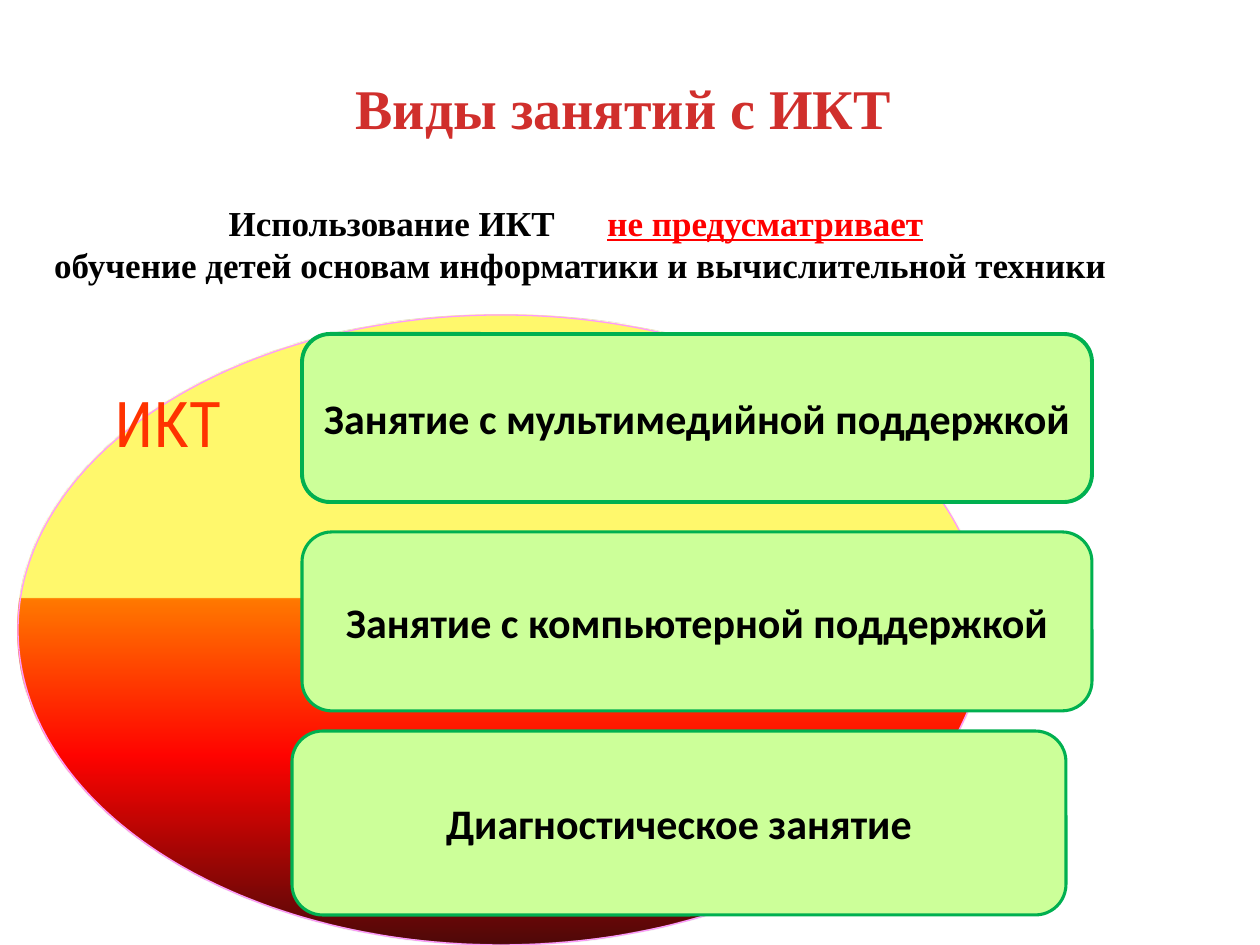
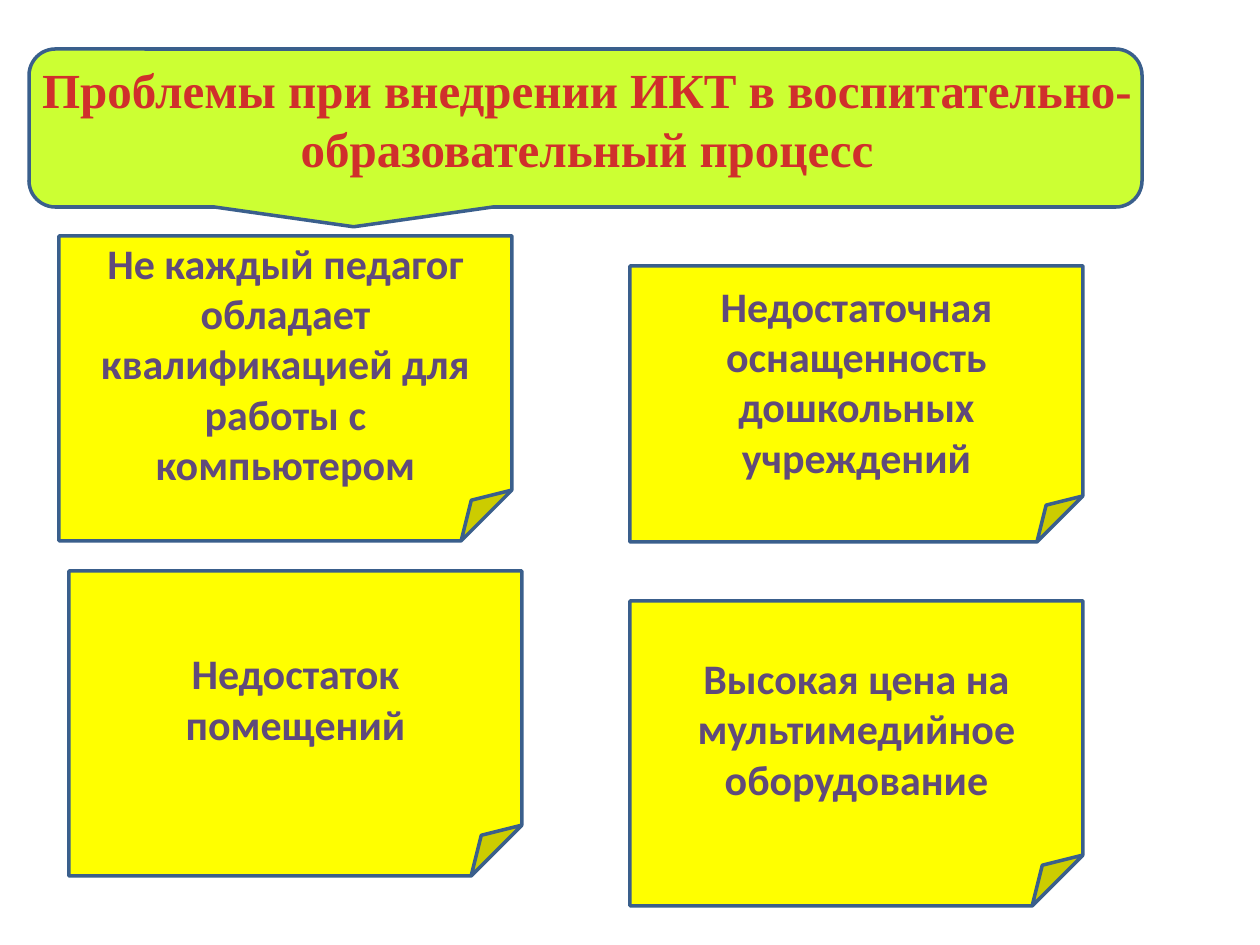
from collections import namedtuple
from dataclasses import dataclass

from lxml import etree
from pptx import Presentation
from pptx.dml.color import RGBColor as Rgb
from pptx.enum.shapes import MSO_SHAPE as Preset
from pptx.enum.text import MSO_ANCHOR as Anchor, PP_ALIGN as Align
from pptx.oxml.ns import qn
from pptx.util import Emu, Pt

PX = 914400 / 126
Box = namedtuple("Box", "x y w h")


@dataclass(frozen=True)
class Theme:
    serif: str = "Times New Roman"
    sans: str = "Calibri"
    narrow: str = "Roboto Condensed"
    black: str = "000000"
    red: str = "FF0000"
    oval_edge: str = "FF99FF"
    lesson_fill: str = "CCFF99"
    lesson_edge: str = "00B050"
    label: str = "FF3300"
    label_edge: str = "666699"
    header_fill: str = "CCFF33"
    note_fill: str = "FFFF00"
    blue_edge: str = "3A5F8C"
    purple: str = "604A7B"
    title_stops: tuple = ((0, "FC7C7A", 100), (75, "D02F2C", 100), (100, "C70500", 100))
    oval_stops: tuple = ((45, "FFF200", 57), (45, "FF7A00", 100),
                         (70, "FF0300", 100), (100, "4D0808", 100))
    large_title: int = 32
    small_title: int = 28
    body: int = 24
    intro: int = 20
    label_size: int = 36


THEME = Theme()


def emu(box):
    return [Emu(round(length * PX)) for length in box]


def assign(target, values):
    for name, value in values.items():
        setattr(target, name, value)


def fill_gradient(fill, owner, stops):
    """Fill from top to bottom with (percent, colour, opacity) stops."""
    fill.gradient()
    fill.gradient_angle = 270
    stop_list = next(owner.iter(qn("a:gsLst")))
    stop_list[:] = []
    for percent, colour, opacity in stops:
        stop = etree.SubElement(stop_list, qn("a:gs"), pos=str(percent * 1000))
        tint = etree.SubElement(stop, qn("a:srgbClr"), val=colour)
        if opacity < 100:
            etree.SubElement(tint, qn("a:alpha"), val=str(opacity * 1000))


def write(frame, lines, style, colour, anchor=Anchor.MIDDLE, wrap=True):
    """Write centred lines, each a list of (text, font changes, colour or None)."""
    assign(frame, {"vertical_anchor": anchor, "word_wrap": wrap})
    runs = []
    for index, line in enumerate(lines):
        paragraph = frame.add_paragraph() if index else frame.paragraphs[0]
        paragraph.alignment = Align.CENTER
        for text, changes, own_colour in line:
            run = paragraph.add_run()
            run.text = text
            assign(run.font, {**style, **changes})
            run.font.fill.solid()
            run.font.fill.fore_color.rgb = Rgb.from_string(own_colour or colour)
            runs.append(run)
    return runs


def add_panel(slide, preset, box, fill, edge, width):
    panel = slide.shapes.add_shape(preset, *emu(box))
    panel.shadow.inherit = False
    if isinstance(fill, str):
        panel.fill.solid()
        panel.fill.fore_color.rgb = Rgb.from_string(fill)
    else:
        fill_gradient(panel.fill, panel._element.spPr, fill)
    panel.line.color.rgb = Rgb.from_string(edge)
    panel.line.width = Pt(width)
    return panel


def add_text(slide, box, *args, **options):
    frame = slide.shapes.add_textbox(*emu(box)).text_frame
    return write(frame, *args, **options)


def add_title(slide, box, text, size):
    style = {"name": THEME.serif, "size": Pt(size), "bold": True}
    [title] = add_text(slide, box, [[(text, {}, None)]], style, THEME.black)
    fill_gradient(title.font.fill, title._r, THEME.title_stops)


def add_captioned(slide, preset, box, caption, look, colour, wrap):
    panel = add_panel(slide, preset, box, *look)
    style = {"name": THEME.sans, "size": Pt(THEME.body), "bold": True}
    write(panel.text_frame, [[(caption, {}, None)]], style, colour, wrap=wrap)


def add_intro(slide, box):
    style = {"name": THEME.serif, "size": Pt(THEME.intro), "bold": True}
    lines = [
        [("Использование ИКТ", {}, None), (" ", {}, None),
         ("не предусматривает", {"underline": True}, THEME.red), (" ", {}, None)],
        [("обучение детей основам информатики и вычислительной техники", {}, None)],
    ]
    runs = add_text(slide, box, lines, style, THEME.black, anchor=Anchor.TOP)
    wide_gap = runs[1]
    wide_gap._r.get_or_add_rPr().set("spc", "2500")


def add_label(slide, box):
    style = {"name": THEME.narrow, "size": Pt(THEME.label_size)}
    [label] = add_text(slide, box, [[("ИКТ", {}, None)]], style, THEME.label,
                       anchor=Anchor.TOP, wrap=False)
    outline = etree.Element(qn("a:ln"), w=str(Pt(0.75)))
    ink = etree.SubElement(outline, qn("a:solidFill"))
    etree.SubElement(ink, qn("a:srgbClr"), val=THEME.label_edge)
    label._r.get_or_add_rPr().insert(0, outline)


def add_lessons(slide, box):
    """Place the oval over the whole box and the lesson types on top of it."""
    add_panel(slide, Preset.OVAL, box, THEME.oval_stops, THEME.oval_edge, 0.75)
    lessons = [
        ("Занятие с мультимедийной поддержкой", Box(284, 19, 790, 168), 2.25),
        ("Занятие с компьютерной поддержкой", Box(284, 217, 790, 179), 1.75),
        ("Диагностическое занятие", Box(274, 416, 774, 184), 1.75),
    ]
    for caption, place, width in lessons:
        spot = place._replace(x=box.x + place.x, y=box.y + place.y)
        look = (THEME.lesson_fill, THEME.lesson_edge, width)
        add_captioned(slide, Preset.FLOWCHART_ALTERNATE_PROCESS, spot, caption,
                      look, THEME.black, wrap=False)
    add_label(slide, Box(box.x + 45, box.y + 63, 210, 399))


def add_problems(slide, box):
    """Place two columns of notes, the right one 30 px lower."""
    note_w, note_h, drop = 453, 305, 30
    right = box.w - note_w
    row = box.h - note_h - drop
    problems = [
        ("Не каждый педагог обладает квалификацией для работы с компьютером",
         0, 0, note_h),
        ("Недостаточная оснащенность дошкольных учреждений",
         right, drop, note_h - 29),
        ("Недостаток помещений", 10, row, note_h),
        ("Высокая цена на мультимедийное оборудование",
         right, row + drop, note_h),
    ]
    for caption, x, y, height in problems:
        add_captioned(slide, Preset.FOLDED_CORNER,
                      Box(box.x + x, box.y + y, note_w, height), caption,
                      (THEME.note_fill, THEME.blue_edge, 2), THEME.purple, wrap=True)


def add_header(slide, box):
    add_panel(slide, Preset.ROUNDED_RECTANGULAR_CALLOUT, box,
              THEME.header_fill, THEME.blue_edge, 2)
    add_title(slide, Box(box.x - 9, box.y - 10, box.w + 21, box.h),
              "Проблемы при внедрении ИКТ в воспитательно- образовательный процесс",
              THEME.small_title)


def build_lesson_types(slide):
    add_lessons(slide, Box(18, 315, 966, 630))
    add_title(slide, Box(25, 35, 1197, 144), "Виды занятий с ИКТ", THEME.large_title)
    add_intro(slide, Box(25, 195, 1111, 97))


def build_problems(slide):
    add_header(slide, Box(29, 49, 1113, 158))
    add_problems(slide, Box(59, 236, 1024, 670))


def main():
    deck = Presentation()
    assign(deck, dict(zip(("slide_width", "slide_height"), emu((1260, 945)))))
    blank = deck.slide_layouts[6]
    for build in (build_lesson_types, build_problems):
        build(deck.slides.add_slide(blank))
    deck.save("out.pptx")


if __name__ == "__main__":
    main()
